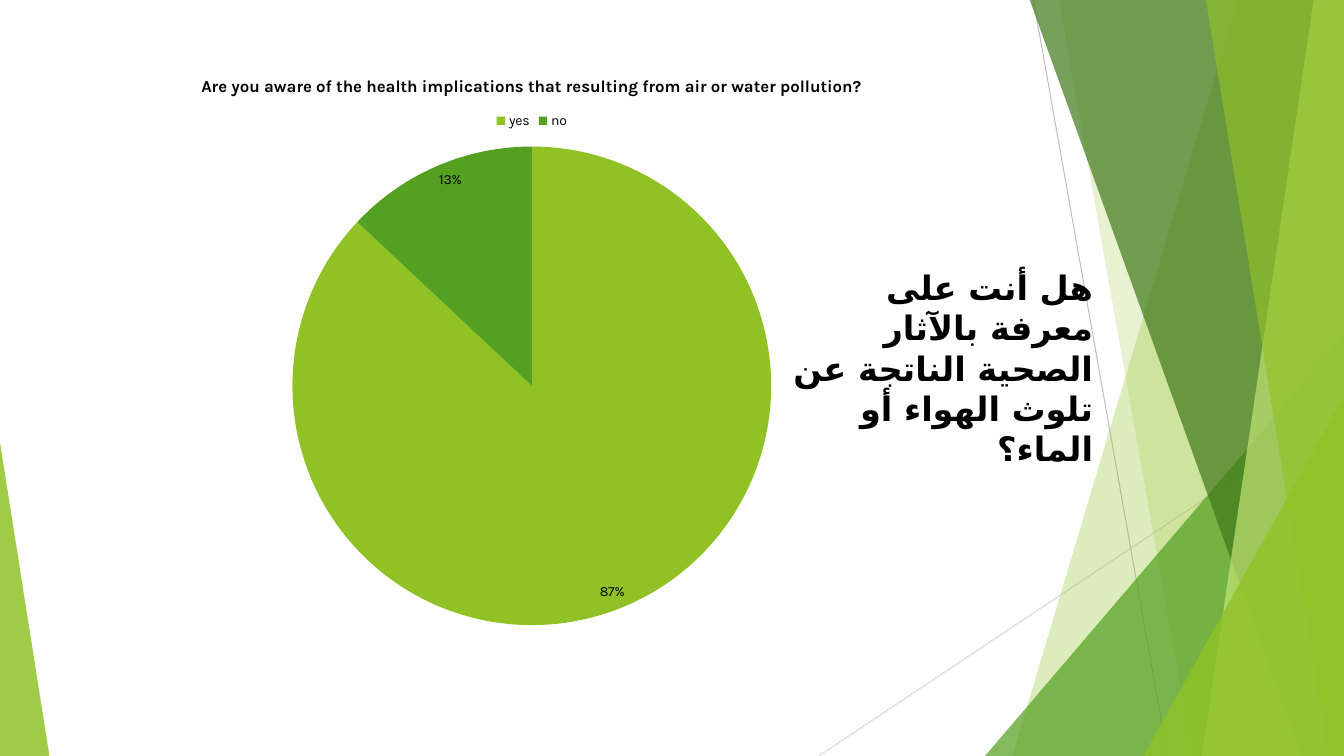
from lxml import etree
from pptx import Presentation
from pptx.chart.data import CategoryChartData
from pptx.dml.color import RGBColor
from pptx.enum.chart import XL_CHART_TYPE, XL_LABEL_POSITION, XL_LEGEND_POSITION
from pptx.enum.shapes import MSO_CONNECTOR, MSO_SHAPE
from pptx.enum.text import MSO_AUTO_SIZE, PP_ALIGN
from pptx.oxml.ns import qn
from pptx.util import Emu, Pt

PIE = XL_CHART_TYPE.PIE
INSIDE_END = XL_LABEL_POSITION.INSIDE_END
LEGEND_TOP = XL_LEGEND_POSITION.TOP
STRAIGHT = MSO_CONNECTOR.STRAIGHT
TRIANGLE = MSO_SHAPE.ISOSCELES_TRIANGLE
FIT_SHAPE = MSO_AUTO_SIZE.SHAPE_TO_FIT_TEXT
RIGHT = PP_ALIGN.RIGHT

PX = 9144
WIDTH, HEIGHT = 1333, 750
FONT, ARABIC_FONT = "Karla", "DejaVu Sans"
BLACK, LIME, GREEN = "000000", "90C226", "54A021"
QUESTION = "Are you aware of the health implications that resulting from air or water pollution?"
QUESTION_ARABIC = "هل أنت على معرفة بالآثار الصحية الناتجة عن تلوث الهواء أو الماء؟"
ANSWERS = {"yes": (87, LIME), "no": (13, GREEN)}


def px(length):
    """Turn px into EMU."""
    return Emu(length * PX)


def color(hex_string):
    """Turn a hex string into a colour."""
    return RGBColor.from_string(hex_string)


def style_font(font, size, bold=False):
    """Set the deck's black type on a font."""
    font.name, font.size, font.bold = FONT, Pt(size), bold
    font.color.rgb = color(BLACK)


def paint(facet, hex_string, opacity):
    """Give a facet a see-through fill and no outline."""
    facet.shadow.inherit = False
    facet.line.fill.background()
    facet.fill.solid()
    facet.fill.fore_color.rgb = color(hex_string)
    tint = facet.fill._xPr.find(qn("a:solidFill"))[0]
    etree.SubElement(tint, qn("a:alpha")).set("val", str(opacity * 1000))


def add_ray(slide, start, end, hex_string):
    """Draw one thin grey line."""
    ray = slide.shapes.add_connector(STRAIGHT, *map(px, start + end))
    ray.line.color.rgb = color(hex_string)
    ray.line.width = Pt(0.75)
    etree.SubElement(ray._element.spPr, qn("a:effectLst"))


def add_band(slide, right, top_left, bottom_left, hex_string, opacity):
    """Draw a full-height band from a slanted left edge to the right edge."""
    outline = slide.shapes.build_freeform(top_left, -1, scale=PX)
    outline.add_line_segments([(right, -1), (right, HEIGHT), (bottom_left, HEIGHT)])
    paint(outline.convert_to_shape(), hex_string, opacity)


def add_corner(slide, left, top, right, bottom, apex, hex_string, opacity):
    """Draw a right-angled triangle whose apex sits at a share of its width."""
    corner = slide.shapes.add_shape(
        TRIANGLE, px(left), px(top), px(right - left), px(bottom - top))
    corner.adjustments[0] = apex
    paint(corner, hex_string, opacity)


def add_backdrop(slide, width, height):
    """Layer the rays, bands and corners along the slide's edges."""
    add_ray(slide, (1025, 0), (1158, height), "BFBFBF")
    add_ray(slide, (width, 403), (812, height), "D9D9D9")
    add_band(slide, width, 1228, 1004, LIME, 30)
    add_band(slide, width, 1050, 1183, LIME, 20)
    add_corner(slide, 977, 333, width, height, 1, GREEN, 72)
    add_band(slide, width, 1021, 1291, "3F7819", 70)
    add_band(slide, width, 1303, 1192, "C0E474", 70)
    add_band(slide, width, 1196, 1318, LIME, 65)
    add_corner(slide, 1134, 393, width, height, 1, LIME, 80)
    add_corner(slide, 0, 439, 49, height, 0, LIME, 85)


def add_awareness_pie(slide, left, top, width, height):
    """Chart the answers as a pie with title, legend and percentages."""
    answers = CategoryChartData()
    answers.categories = list(ANSWERS)
    answers.add_series("Series 1", [share for share, _ in ANSWERS.values()])
    chart = slide.shapes.add_chart(
        PIE, px(left), px(top), px(width), px(height), answers).chart
    style_font(chart.font, 10)

    chart.has_title = True
    title = chart.chart_title.text_frame.paragraphs[0].add_run()
    title.text = QUESTION
    style_font(title.font, 12, bold=True)

    chart.has_legend = True
    chart.legend.position = LEGEND_TOP
    chart.legend.include_in_layout = False
    style_font(chart.legend.font, 10)

    pie = chart.plots[0]
    pie.vary_by_categories = True
    for index, (_, hex_string) in enumerate(ANSWERS.values()):
        wedge = pie.series[0].points[index].format
        wedge.fill.solid()
        wedge.fill.fore_color.rgb = color(hex_string)
        wedge.line.fill.background()

    pie.has_data_labels = True
    percentages = pie.data_labels
    percentages.show_percentage = True
    percentages.show_value = False
    percentages.number_format = "0%"
    percentages.number_format_is_linked = False
    percentages.position = INSIDE_END
    style_font(percentages.font, 10)


def add_arabic_question(slide, left, top, width, height):
    """Set the Arabic question in bold, right to left."""
    frame = slide.shapes.add_textbox(px(left), px(top), px(width), px(height)).text_frame
    frame.word_wrap = True
    frame.auto_size = FIT_SHAPE
    paragraph = frame.paragraphs[0]
    paragraph.alignment = RIGHT
    paragraph._p.get_or_add_pPr().set("rtl", "1")
    question = paragraph.add_run()
    question.text = QUESTION_ARABIC
    style_font(question.font, 24, bold=True)
    etree.SubElement(question.font._element, qn("a:cs")).set("typeface", ARABIC_FONT)


def main():
    """Build the slide and save it."""
    deck = Presentation()
    deck.slide_width, deck.slide_height = px(WIDTH), px(HEIGHT)
    slide = deck.slides.add_slide(deck.slide_layouts[6])
    add_backdrop(slide, WIDTH, HEIGHT)
    add_awareness_pie(slide, 31, 54, 993, 580)
    add_arabic_question(slide, 770, 260, 324, 172)
    deck.save("out.pptx")


if __name__ == "__main__":
    main()
